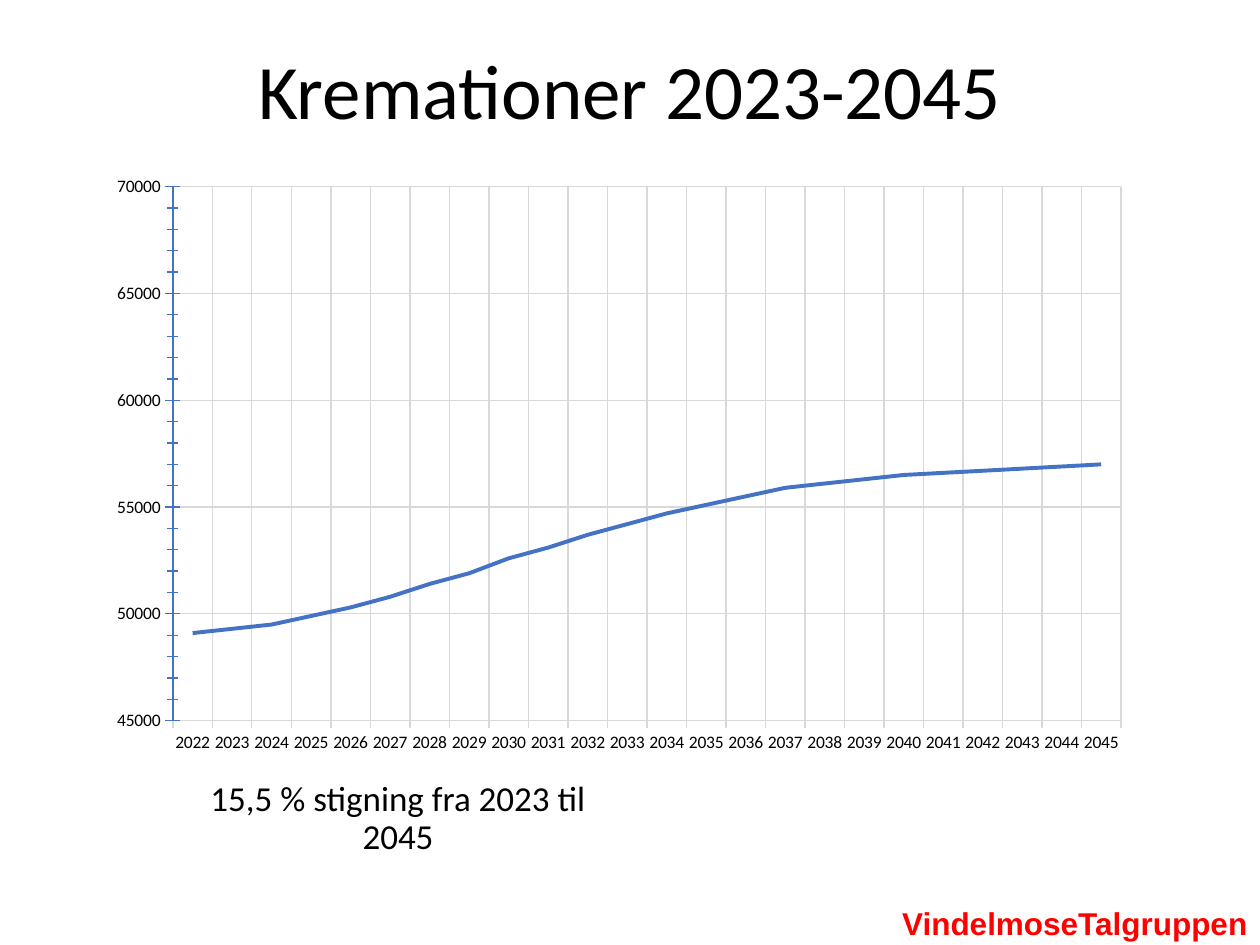
from lxml import etree
from pptx import Presentation
from pptx import util as u
from pptx.chart.data import CategoryChartData
from pptx.dml.color import RGBColor
from pptx.enum import chart as ch, text as tx

W, H = 10, 7.5
HUES = {"ink": "000000", "grid": "D9D9D9", "line": "4472C4", "mark": "FF0000"}
NS = "http://schemas.openxmlformats.org/drawingml/2006/chart"
YEARS = range(2022, 2046)
COUNTS = [49100, 49300, 49500, 49900, 50300, 50800, 51400, 51900,
          52600, 53100, 53700, 54200, 54700, 55100, 55500, 55900,
          56100, 56300, 56500, 56600, 56700, 56800, 56900, 57000]
PLOT = {"layoutTarget": "inner", "xMode": "edge", "yMode": "edge",
        "x": 0.083, "y": 0.08, "w": 0.865, "h": 0.785}


def put(obj, **vals):
    for key, val in vals.items():
        setattr(obj, key, val)


def hue(name):
    return RGBColor.from_string(HUES[name])


def place(x, y, w, h):
    return [u.Inches(v) for v in (x * W, y * H, w * W, h * H)]


def style(font, size, name="Calibri", tint="ink", bold=False):
    put(font, size=u.Pt(size), name=name, bold=bold)
    font.color.rgb = hue(tint)


def stroke(line, tint, width):
    line.color.rgb = hue(tint)
    line.width = u.Pt(width)


def add_text(slide, words, box, size, para=None, wrap=True, **look):
    frame = slide.shapes.add_textbox(*place(*box)).text_frame
    put(frame, word_wrap=wrap, vertical_anchor=tx.MSO_ANCHOR.TOP)
    line = frame.paragraphs[0]
    put(line, **(para or {}))
    run = line.add_run()
    run.text = words
    style(run.font, size, **look)


def set_plot(chart):
    area = chart.plots[0]._element.getparent()
    for old in area.findall(f"{{{NS}}}layout"):
        area.remove(old)
    outer = etree.Element(f"{{{NS}}}layout")
    inner = etree.SubElement(outer, f"{{{NS}}}manualLayout")
    for key, val in PLOT.items():
        etree.SubElement(inner, f"{{{NS}}}{key}").set("val", str(val))
    area.insert(0, outer)


def set_axis(axis, tint, **vals):
    put(axis, has_major_gridlines=True, **vals)
    style(axis.tick_labels.font, 10)
    stroke(axis.format.line, tint, 0.75)
    stroke(axis.major_gridlines.format.line, "grid", 0.75)


def add_graph(slide, box):
    data = CategoryChartData(number_format="0")
    data.categories = [str(year) for year in YEARS]
    data.add_series("Kremationer", COUNTS)
    chart = slide.shapes.add_chart(
        ch.XL_CHART_TYPE.LINE_STACKED, *place(*box), data).chart
    put(chart, has_legend=False, has_title=False)
    style(chart.font, 10)
    tick = ch.XL_TICK_MARK
    set_axis(chart.category_axis, "grid", major_tick_mark=tick.CROSS,
             minor_tick_mark=tick.NONE)
    set_axis(chart.value_axis, "line", major_tick_mark=tick.CROSS,
             minor_tick_mark=tick.CROSS, minimum_scale=45000,
             maximum_scale=70000, major_unit=5000, minor_unit=1000)
    put(chart.value_axis.tick_labels, number_format="0",
        number_format_is_linked=False)
    chart.plots[0].vary_by_categories = False
    curve = chart.plots[0].series[0]
    curve.smooth = False
    curve.marker.style = ch.XL_MARKER_STYLE.NONE
    stroke(curve.format.line, "line", 2.25)
    set_plot(chart)


def main():
    deck = Presentation()
    put(deck, slide_width=u.Inches(W), slide_height=u.Inches(H))
    slide = deck.slides.add_slide(deck.slide_layouts[6])
    mid = {"alignment": tx.PP_ALIGN.CENTER, "line_spacing": 0.9}
    add_text(slide, "VindelmoseTalgruppen", (0.69, 0.95, 0.31, 0.05), 18,
             para={"alignment": tx.PP_ALIGN.RIGHT}, wrap=False,
             name="Arial", tint="mark", bold=True)
    add_graph(slide, (0.065, 0.14, 0.87, 0.72))
    add_text(slide, "15,5 % stigning fra 2023 til 2045",
             (0.126, 0.82, 0.38, 0.06), 20, para=mid)
    add_text(slide, "Kremationer 2023-2045",
             (0.07, 0.05, 0.86, 0.19), 44, para=mid)
    deck.save("out.pptx")


if __name__ == "__main__":
    main()
